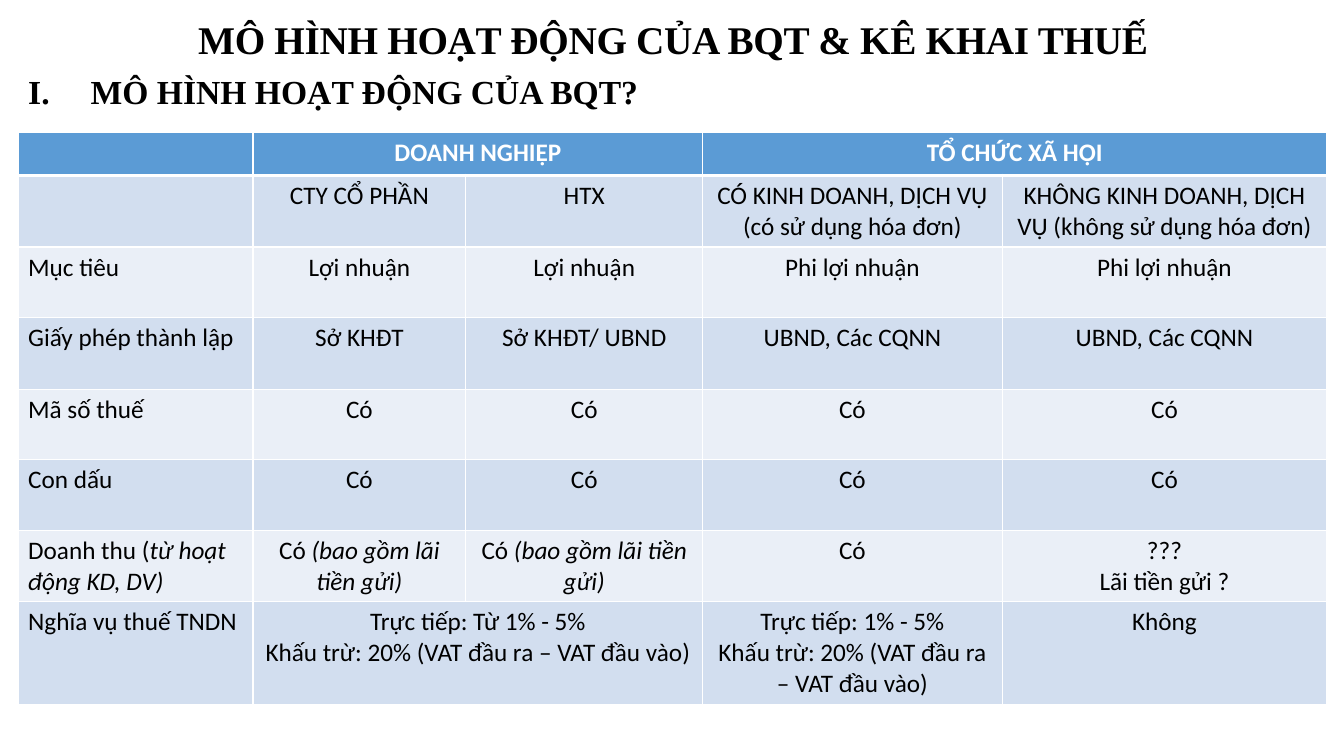
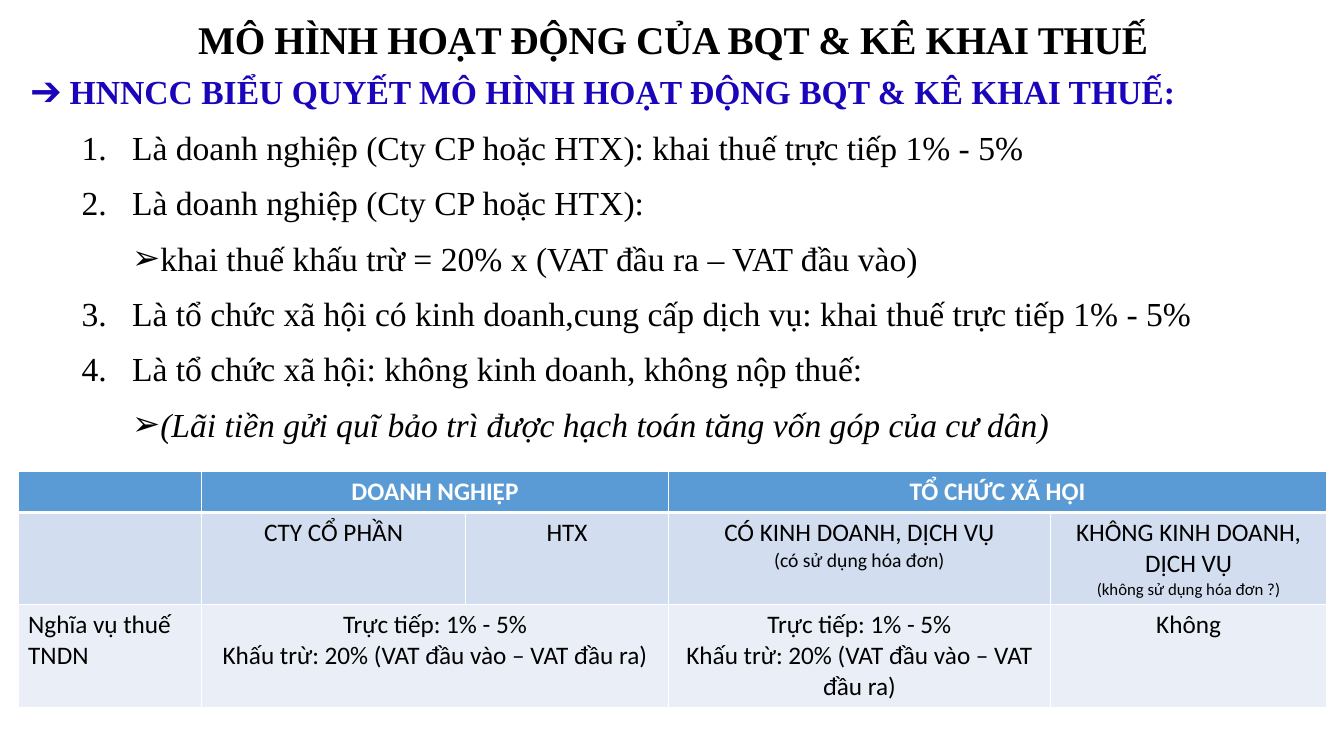
"""Build two slides on operating models and tax filing."""
from lxml import etree
from pptx import Presentation
from pptx.dml.color import RGBColor
from pptx.enum import text as t
from pptx.oxml import ns
from pptx.util import Inches, Pt

hue = RGBColor.from_string
SERIF, SANS = "Times New Roman", "Calibri"
BLACK, WHITE, NAVY = "000000", "FFFFFF", "1B05BB"
HEAD, BANDS = "5B9BD5", ("D2DEEF", "EAEFF7")
TITLE = "MÔ HÌNH HOẠT ĐỘNG CỦA BQT & KÊ KHAI THUẾ"
TOP = ["", "DOANH NGHIỆP", None, "TỔ CHỨC XÃ HỘI", None]
SMALL = {"(có sử dụng hóa đơn)": 14, "(không sử dụng hóa đơn ?)": 12}


def write(par, text, size=18, font=SANS, color=BLACK, bold=False, align=None,
          line=None, before=None, after=None):
    """Fill a paragraph; text between bars is italic."""
    par.alignment = align
    par.line_spacing = line
    par.space_before = None if before is None else Pt(before)
    par.space_after = None if after is None else Pt(after)
    for n, part in enumerate(text.split("|")):
        if part:
            run = par.add_run()
            run.text = part
            run.font.size = Pt(size)
            run.font.name = font
            run.font.bold = bold
            run.font.italic = n % 2 == 1
            run.font.color.rgb = hue(color)


def add(parent, tag, **attrs):
    """Append a drawing element with attributes."""
    node = etree.SubElement(parent, ns.qn("a:" + tag))
    for key, val in attrs.items():
        node.set(key, str(val))
    return node


lead = dict(size=24, font=SERIF, bold=True, line=0.9, before=10)
item = dict(size=24, font=SERIF, line=1.2, before=5)
NUM = (1, 1, -0.5, "buAutoNum", {"type": "arabicPeriod"}, item)
ARROW = (2, 1.25, -0.25, "buChar", {"char": "➢"}, item)
ROMAN = (0, 0.62, -0.62, "buAutoNum", {"type": "romanUcPeriod"}, lead)
PLAIN = (0, 0, 0, "buNone", {}, dict(lead, color=NAVY))

pages = [
    dict(
        body=(0.18, 0.7, 12.89, 0.54),
        list=[(ROMAN, "MÔ HÌNH HOẠT ĐỘNG CỦA BQT?")],
        top=1.31,
        cols=[2.33, 2.11, 2.35, 2.97, 3.22],
        highs=[0.43, 0.71, 0.7, 0.71, 0.7, 0.7, 0.7, 0.71],
        rows=[
            TOP,
            ["", "CTY CỔ PHẦN", "HTX",
             "CÓ KINH DOANH, DỊCH VỤ (có sử dụng hóa đơn)",
             "KHÔNG KINH DOANH, DỊCH VỤ (không sử dụng hóa đơn)"],
            ["Mục tiêu"] + ["Lợi nhuận"] * 2 + ["Phi lợi nhuận"] * 2,
            ["Giấy phép thành lập", "Sở KHĐT", "Sở KHĐT/ UBND"] + ["UBND, Các CQNN"] * 2,
            ["Mã số thuế"] + ["Có"] * 4,
            ["Con dấu"] + ["Có"] * 4,
            ["Doanh thu (|từ hoạt động KD, DV)|"] + ["Có |(bao gồm lãi tiền gửi)|"] * 2
            + ["Có", "???\nLãi tiền gửi ?"],
            ["Nghĩa vụ thuế TNDN",
             "Trực tiếp: Từ 1% - 5%\nKhấu trừ: 20% (VAT đầu ra – VAT đầu vào)", None,
             "Trực tiếp: 1% - 5%\nKhấu trừ: 20% (VAT đầu ra – VAT đầu vào)", "Không"],
        ]),
    dict(
        body=(0.21, 0.7, 12.95, 3.66),
        list=[
            (PLAIN, "➔ HNNCC BIỂU QUYẾT MÔ HÌNH HOẠT ĐỘNG BQT & KÊ KHAI THUẾ:"),
            (NUM, "Là doanh nghiệp (Cty CP hoặc HTX): khai thuế trực tiếp 1% - 5%"),
            (NUM, "Là doanh nghiệp (Cty CP hoặc HTX):"),
            (ARROW, "khai thuế khấu trừ = 20% x (VAT đầu ra – VAT đầu vào)"),
            (NUM, "Là tổ chức xã hội có kinh doanh,cung cấp dịch vụ: khai thuế trực tiếp 1% - 5%"),
            (NUM, "Là tổ chức xã hội: không kinh doanh, không nộp thuế:"),
            (ARROW, "|(Lãi tiền gửi quĩ bảo trì được hạch toán tăng vốn góp của cư dân)|"),
        ],
        top=4.68,
        cols=[1.82, 2.62, 2.01, 3.79, 2.74],
        highs=[0.4, 0.71, 0.71],
        rows=[
            TOP,
            ["", "CTY CỔ PHẦN", "HTX", "CÓ KINH DOANH, DỊCH VỤ\n(có sử dụng hóa đơn)",
             "KHÔNG KINH DOANH, DỊCH VỤ\n(không sử dụng hóa đơn ?)"],
            ["Nghĩa vụ thuế TNDN",
             "Trực tiếp: 1% - 5%\nKhấu trừ: 20% (VAT đầu vào – VAT đầu ra)", None,
             "Trực tiếp: 1% - 5%\nKhấu trừ: 20% (VAT đầu vào – VAT đầu ra)", "Không"],
        ]),
]

deck = Presentation()
deck.slide_width, deck.slide_height = Inches(13.33), Inches(7.5)

for page in pages:
    slide = deck.slides.add_slide(deck.slide_layouts[1])
    title, body = slide.shapes.title, slide.placeholders[1]
    for shape, box in ((title, (0.55, 0, 12.25, 0.7)), (body, page["body"])):
        shape.left, shape.top, shape.width, shape.height = map(Inches, box)
        shape.text_frame.word_wrap = True
        shape.text_frame.auto_size = t.MSO_AUTO_SIZE.NONE
    title.text_frame.vertical_anchor = t.MSO_ANCHOR.MIDDLE
    par = title.text_frame.paragraphs[0]
    write(par, TITLE, size=28, font=SERIF, bold=True, align=t.PP_ALIGN.CENTER,
          line=1.15, before=6, after=6)
    par.runs[0].font._element.set("spc", "-20")

    frame = body.text_frame
    for n, (style, words) in enumerate(page["list"]):
        level, left, hang, tag, attrs, form = style
        par = frame.add_paragraph() if n else frame.paragraphs[0]
        par.level = level
        write(par, words, **form)
        props = par._p.get_or_add_pPr()
        props.set("marL", str(Inches(left)))
        props.set("indent", str(Inches(hang)))
        add(props, tag, **attrs)

    rows, cols, highs = page["rows"], page["cols"], page["highs"]
    grid = slide.shapes.add_table(
        len(rows), len(cols), Inches(0.18), Inches(page["top"]),
        Inches(sum(cols)), Inches(sum(highs))).table
    for col, wide in zip(grid.columns, cols):
        col.width = Inches(wide)
    for r, row in enumerate(rows):
        grid.rows[r].height = Inches(highs[r])
        for c, words in enumerate(row):
            cell = grid.cell(r, c)
            props = cell._tc.get_or_add_tcPr()
            for side in "LRTB":
                thick = 3 if (r, side) in ((0, "B"), (1, "T")) else 1
                edge = add(props, "ln" + side, w=Pt(thick))
                add(add(edge, "solidFill"), "srgbClr", val=WHITE)
            cell.fill.solid()
            cell.fill.fore_color.rgb = hue(BANDS[(r - 1) % 2] if r else HEAD)
            if words is None:
                grid.cell(r, c - 1).merge(cell)
                continue
            for n, line in enumerate(words.split("\n")):
                par = cell.text_frame.add_paragraph() if n else cell.text_frame.paragraphs[0]
                write(par, line, size=SMALL.get(line, 18), bold=r == 0,
                      color=BLACK if r else WHITE,
                      align=t.PP_ALIGN.CENTER if c else None)

deck.save("out.pptx")
